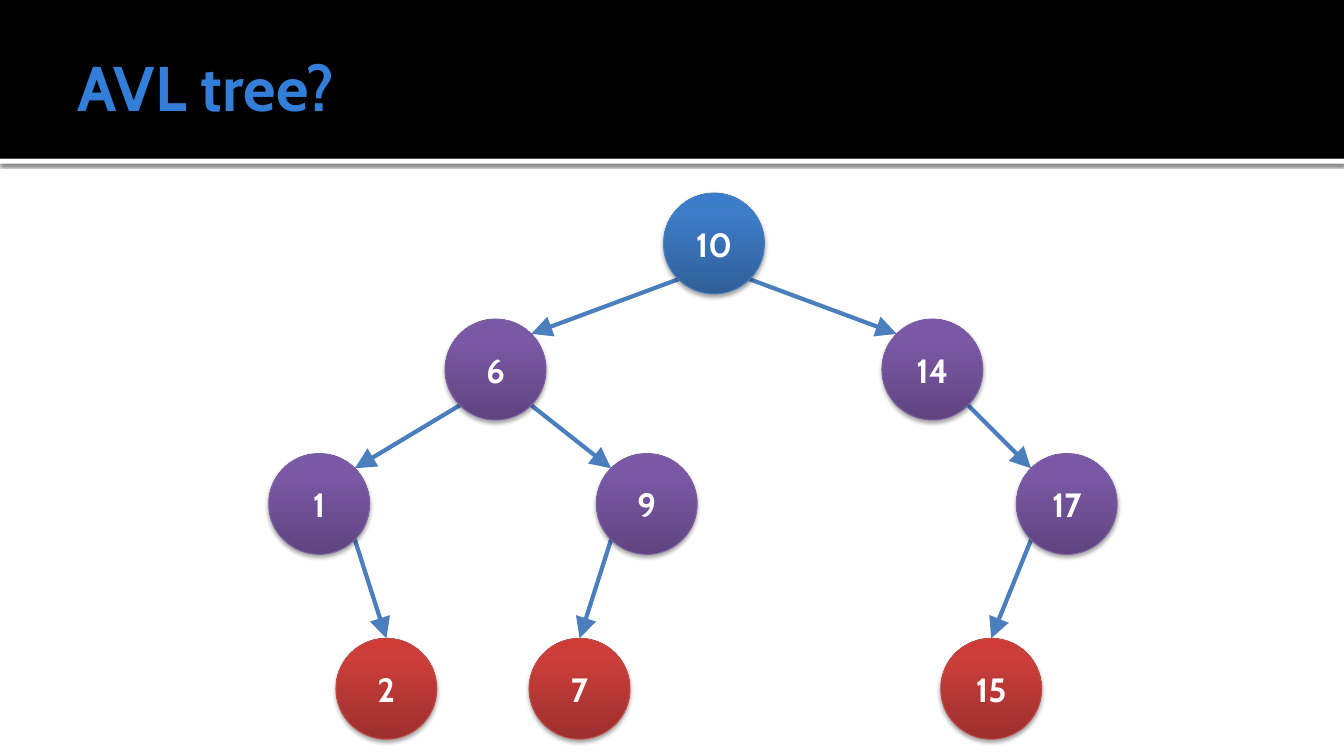
"""Build the AVL tree slide: a header band, a title and a binary tree."""
from copy import deepcopy
from math import sqrt

from lxml.etree import SubElement
from pptx import Presentation
from pptx.dml.color import RGBColor
from pptx.enum.shapes import MSO_CONNECTOR, MSO_SHAPE
from pptx.enum.text import MSO_ANCHOR, PP_ALIGN
from pptx.oxml import parse_xml
from pptx.oxml.ns import nsdecls, qn
from pptx.util import Pt

PX = 9525
FONT = "Cabin"
NODE_SIZE = 96
RADIUS = NODE_SIZE // 2
DIAGONAL = round(RADIUS / sqrt(2))
LEAF_TOP = 608
EDGE_COLOR = "4B7EBC"

BLUE = (("2F5F99", "3D7CC7", "3A7CCB"), "4B7EBC")
PURPLE = (("5F4480", "7B58A6", "7C57A8"), "7D60A0")
RED = (("9C2F2D", "CB3E3A", "CE3B37"), "BF4C48")
NODES = {
    "10": (632, 184, BLUE),
    "6": (424, 304, PURPLE),
    "14": (840, 304, PURPLE),
    "1": (256, 432, PURPLE),
    "9": (568, 432, PURPLE),
    "17": (968, 432, PURPLE),
    "2": (320, LEAF_TOP, RED),
    "7": (504, LEAF_TOP, RED),
    "15": (896, LEAF_TOP, RED),
}
EDGES = [("10", "6"), ("10", "14"), ("6", "1"), ("6", "9"), ("14", "17"),
         ("1", "2"), ("9", "7"), ("17", "15")]


def rgb(color):
    return RGBColor.from_string(color)


def add_shadow(shape, alpha, blur, distance):
    shape.shadow.inherit = False
    shape._element.spPr.remove(shape._element.spPr.find(qn("a:effectLst")))
    shape._element.spPr.append(parse_xml(
        f'<a:effectLst {nsdecls("a")}>'
        f'<a:outerShdw blurRad="{Pt(blur)}" dist="{Pt(distance)}" dir="5400000" rotWithShape="0">'
        f'<a:srgbClr val="000000"><a:alpha val="{alpha * 1000}"/></a:srgbClr>'
        '</a:outerShdw></a:effectLst>'))


presentation = Presentation()
presentation.slide_width = 1280 * PX
presentation.slide_height = 720 * PX
slide = presentation.slides.add_slide(presentation.slide_layouts[5])
shapes = slide.shapes

title = shapes.title
title.left, title.top, title.width, title.height = 64 * PX, 16 * PX, 1152 * PX, 132 * PX
title_frame = title.text_frame
title_frame.text = "AVL tree?"
title_frame.vertical_anchor = MSO_ANCHOR.MIDDLE
title_frame.margin_left = Pt(7.2)
title_frame.margin_top = title_frame.margin_right = title_frame.margin_bottom = Pt(3.6)
paragraph = title_frame.paragraphs[0]
paragraph.alignment = PP_ALIGN.LEFT
paragraph.font.name = FONT
paragraph.font.size = Pt(45)
paragraph.font.bold = True
paragraph.font.color.rgb = rgb("337ED9")

for position, (top, height, color) in enumerate([(151, 5, "FFFFFF"), (0, 151, "000000")]):
    band = shapes.add_shape(MSO_SHAPE.RECTANGLE, 0, top * PX, 1280 * PX, height * PX)
    band.fill.solid()
    band.fill.fore_color.rgb = rgb(color)
    band.line.fill.background()
    band.shadow.inherit = False
    if position == 0:
        add_shadow(band, 60, 2.5, 0.8)
    shapes._spTree.insert(2 + position, band._element)

for parent, child in EDGES:
    parent_left, parent_top, _ = NODES[parent]
    child_left, child_top, _ = NODES[child]
    side = 1 if child_left > parent_left else -1
    start_x = parent_left + RADIUS + side * DIAGONAL
    start_y = parent_top + RADIUS + DIAGONAL
    end_x, end_y = child_left + RADIUS, child_top
    if child_top != LEAF_TOP:
        end_x -= side * DIAGONAL
        end_y += RADIUS - DIAGONAL
    edge = shapes.add_connector(MSO_CONNECTOR.STRAIGHT, start_x * PX, start_y * PX,
                                end_x * PX, end_y * PX)
    edge.line.color.rgb = rgb(EDGE_COLOR)
    edge.line.width = Pt(3)
    SubElement(edge.line._get_or_add_ln(), qn("a:tailEnd"), type="triangle", w="lg", len="lg")
    SubElement(edge._element.spPr, qn("a:effectLst"))

for label, (left, top, (gradient, outline)) in NODES.items():
    node = shapes.add_shape(MSO_SHAPE.OVAL, left * PX, top * PX, NODE_SIZE * PX, NODE_SIZE * PX)
    node.fill.gradient()
    node.fill.gradient_angle = 90
    stop_list = node._element.spPr.find(qn("a:gradFill")).find(qn("a:gsLst"))
    stop_list.insert(1, deepcopy(stop_list[0]))
    for stop, position, color in zip(node.fill.gradient_stops, (0, 0.8, 1), gradient):
        stop.position = position
        stop.color.rgb = rgb(color)
    node.line.color.rgb = rgb(outline)
    node.line.width = Pt(0.75)
    add_shadow(node, 35, 3.1, 1.8)
    node.text_frame.text = label
    node.text_frame.vertical_anchor = MSO_ANCHOR.MIDDLE
    paragraph = node.text_frame.paragraphs[0]
    paragraph.alignment = PP_ALIGN.CENTER
    paragraph.font.name = FONT
    paragraph.font.size = Pt(24)
    paragraph.font.bold = True
    paragraph.font.color.rgb = rgb("FFFFFF")

presentation.save("out.pptx")
